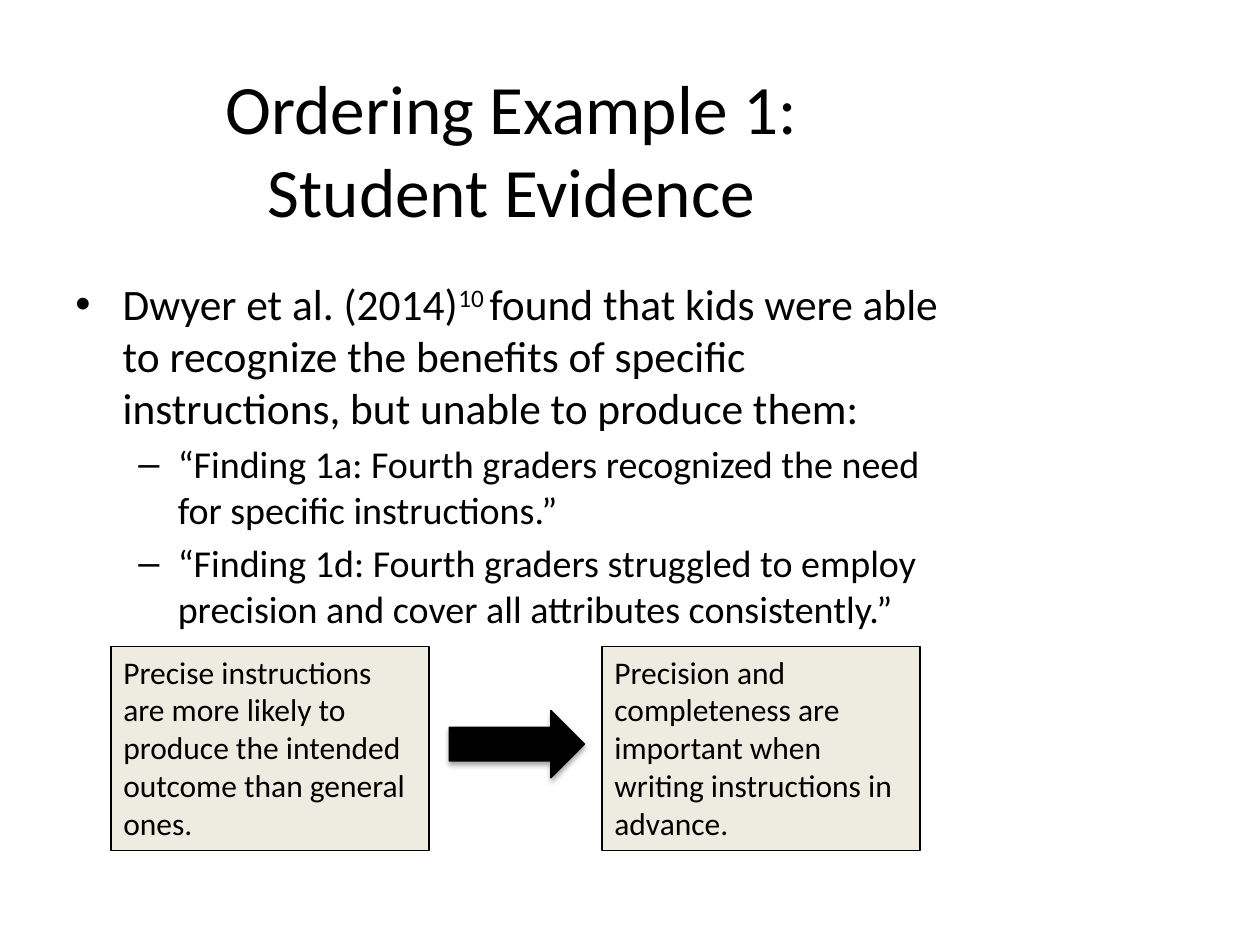
"""Build the "Ordering Example 1: Student Evidence" slide."""
from lxml import etree
from pptx import Presentation
from pptx.dml.color import RGBColor
from pptx.enum import shapes, text
from pptx.oxml import parse_xml
from pptx.oxml.ns import nsdecls, qn
from pptx.util import Pt


def color(value):
    return RGBColor.from_string(value)


def format_runs(paragraph, size):
    for run in paragraph.runs:
        run.font.size = Pt(size)
        run.font.name = "Calibri"
        run.font.color.rgb = color("000000")


presentation = Presentation()
presentation.slide_width, presentation.slide_height = Pt(720), Pt(540)
slide = presentation.slides.add_slide(presentation.slide_layouts[6])

title = slide.shapes.add_textbox(Pt(36), Pt(39.6), Pt(512.6), Pt(90))
title.text_frame.word_wrap = True
title.text_frame.vertical_anchor = text.MSO_ANCHOR.MIDDLE
title.text_frame.text = "Ordering Example 1:\vStudent Evidence"
title_paragraph = title.text_frame.paragraphs[0]
title_paragraph.alignment = text.PP_ALIGN.CENTER
format_runs(title_paragraph, 39.6)

body = slide.shapes.add_textbox(Pt(36), Pt(154.8), Pt(512.6), Pt(197.3))
body.text_frame.word_wrap = True
items = [
    (0, 27, 27, "•", 24.8, [
        "Dwyer et al. (2014)", "10 ",
        "found that kids were able to recognize the benefits of specific "
        "instructions, but unable to produce them:"]),
    (1, 58.5, 22.5, "–", 21.7, [
        "“Finding 1a: Fourth graders recognized the need for specific instructions.”"]),
    (1, 58.5, 22.5, "–", 21.7, [
        "“Finding 1d: Fourth graders struggled to employ precision and cover "
        "all attributes consistently.”"]),
]
for index, (level, margin, hanging, bullet, size, parts) in enumerate(items):
    paragraph = body.text_frame.add_paragraph() if index else body.text_frame.paragraphs[0]
    paragraph.level = level
    paragraph.space_before = Pt(size * 0.2)
    for part in parts:
        paragraph.add_run().text = part
    format_runs(paragraph, size)
    properties = paragraph._p.get_or_add_pPr()
    properties.set("marL", str(Pt(margin)))
    properties.set("indent", str(-Pt(hanging)))
    etree.SubElement(properties, qn("a:buFont")).set("typeface", "Arial")
    etree.SubElement(properties, qn("a:buChar")).set("char", bullet)
citation = body.text_frame.paragraphs[0].runs[1]
citation._r.get_or_add_rPr().set("baseline", "30000")

rectangle = shapes.MSO_SHAPE.RECTANGLE
figures = [
    (rectangle, 63.4, 369.4, 181.8, 116.6, "EEECE1",
     "Precise instructions are more likely to produce the intended outcome than general ones."),
    (shapes.MSO_SHAPE.RIGHT_ARROW, 256.7, 406, 77.3, 38.5, "000000", ""),
    (rectangle, 344, 369.4, 181.8, 116.6, "EEECE1",
     "Precision and completeness are important when writing instructions in advance."),
]
for kind, left, top, width, height, fill, wording in figures:
    shape = slide.shapes.add_shape(kind, Pt(left), Pt(top), Pt(width), Pt(height))
    shape.shadow.inherit = False
    shape.fill.solid()
    shape.fill.fore_color.rgb = color(fill)
    shape.line.color.rgb = color("000000")
    shape.line.width = Pt(0.75)
    if wording:
        shape.text_frame.word_wrap = True
        shape.text_frame.vertical_anchor = text.MSO_ANCHOR.TOP
        shape.text_frame.text = wording
        paragraph = shape.text_frame.paragraphs[0]
        paragraph.alignment = text.PP_ALIGN.LEFT
        format_runs(paragraph, 18)
    else:
        shape._element.spPr.find(qn("a:effectLst")).append(parse_xml(
            f'<a:outerShdw {nsdecls("a")} blurRad="{Pt(3.1)}" dist="{Pt(1.8)}" '
            'dir="5400000" rotWithShape="0"><a:srgbClr val="000000">'
            '<a:alpha val="35000"/></a:srgbClr></a:outerShdw>'))

presentation.save("out.pptx")
